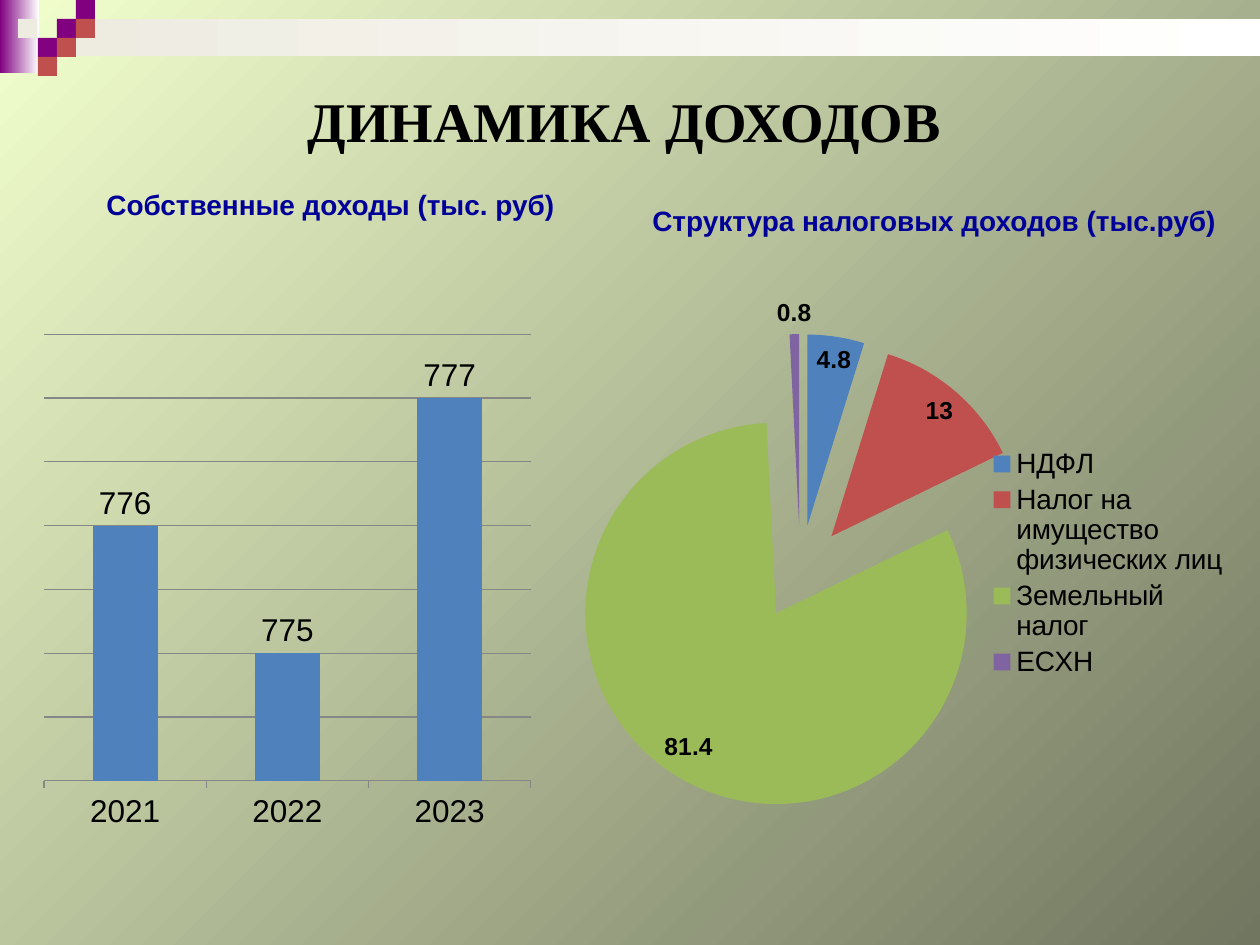
"""Build a slide on revenue dynamics with a column chart and a pie chart."""
from lxml import etree
from pptx import Presentation
from pptx import util as u
from pptx.chart.data import CategoryChartData
from pptx.dml.color import RGBColor
from pptx.enum import chart as ch
from pptx.enum import shapes, text
from pptx.oxml.ns import qn

PURPLE, RED, CREAM, WHITE, BLACK = "800080", "C0504D", "EEECE1", "FFFFFF", "000000"
BLUE, GREEN, VIOLET, NAVY, GREY = "4F81BD", "9BBB59", "8064A2", "000099", "868686"


def px(n):
    return u.Emu(round(n * 914400 / 126))


def box(*lengths):
    return [px(n) for n in lengths]


def rgb(value):
    return RGBColor.from_string(value)


def solid(fill, color):
    fill.solid()
    fill.fore_color.rgb = rgb(color)


def gradient(fill, start, end, angle=0):
    fill.gradient()
    fill.gradient_angle = angle
    for stop, color in zip(fill.gradient_stops, (start, end)):
        stop.color.rgb = rgb(color)


def style(font, size, color=BLACK, bold=False, name="Arial"):
    font.size, font.bold, font.name = u.Pt(size), bold, name
    font.color.rgb = rgb(color)


def add_rect(s, x, y, w, h, *colors):
    sp = s.shapes.add_shape(shapes.MSO_SHAPE.RECTANGLE, *box(x, y, w, h))
    sp.shadow.inherit = False
    sp.line.fill.background()
    paint = gradient if len(colors) == 2 else solid
    paint(sp.fill, *colors)


def add_header(s, x, y):
    add_rect(s, x, y, 39, 73, PURPLE, WHITE)
    add_rect(s, x + 57, y + 19, 1203, 37, CREAM, WHITE)
    add_rect(s, x + 18, y + 19, 19, 19, CREAM)
    for step in range(3):
        left, top = x + 38 + 19 * step, y + 38 - 19 * step
        add_rect(s, left, top, 19, 19, PURPLE)
        add_rect(s, left, top + 19, 19, 19, RED)


def add_title(s, x, y, w, h):
    sp = s.shapes.title
    sp.left, sp.top, sp.width, sp.height = box(x, y, w, h)
    tf = sp.text_frame
    tf.text = "ДИНАМИКА ДОХОДОВ"
    tf.margin_left = tf.margin_right = tf.margin_top = tf.margin_bottom = 0
    tf.vertical_anchor = text.MSO_ANCHOR.TOP
    tf.auto_size = text.MSO_AUTO_SIZE.NONE
    p = tf.paragraphs[0]
    p.alignment = text.PP_ALIGN.CENTER
    p.line_spacing, p.space_after = u.Pt(38.4), u.Pt(23.1)
    style(p.runs[0].font, 32, bold=True, name="Times New Roman")


def add_caption(s, x, y, w, h, wording, wrap):
    tf = s.shapes.add_textbox(*box(x, y, w, h)).text_frame
    tf.text = wording
    tf.word_wrap = wrap
    tf.vertical_anchor = text.MSO_ANCHOR.MIDDLE
    tf.auto_size = text.MSO_AUTO_SIZE.SHAPE_TO_FIT_TEXT
    style(tf.paragraphs[0].runs[0].font, 16, NAVY, bold=True)


def add_chart(s, kind, bounds, cats, vals):
    data = CategoryChartData()
    data.categories = cats
    data.add_series("Series 1", vals)
    chart = s.shapes.add_chart(kind, *box(*bounds), data).chart
    chart.has_title = chart.has_legend = False
    style(chart.font, 18)
    return chart


def add_labels(plot, size, position, bold=False):
    plot.has_data_labels = True
    labels = plot.data_labels
    labels.show_value = True
    labels.position = position
    style(labels.font, size, bold=bold)


def add_revenue_columns(s, *bounds):
    chart = add_chart(s, ch.XL_CHART_TYPE.COLUMN_CLUSTERED, bounds,
                      ["2021", "2022", "2023"], [776, 775, 777])
    plot = chart.plots[0]
    plot.gap_width, plot.vary_by_categories = 150, False
    solid(plot.series[0].format.fill, BLUE)
    add_labels(plot, 18, ch.XL_LABEL_POSITION.OUTSIDE_END)
    values, years = chart.value_axis, chart.category_axis
    values.minimum_scale, values.maximum_scale, values.major_unit = 774, 777.5, 0.5
    values.visible = False
    values.has_major_gridlines = True
    years.major_tick_mark = ch.XL_TICK_MARK.OUTSIDE
    for line in (values.major_gridlines.format.line, years.format.line):
        line.color.rgb = rgb(GREY)
        line.width = u.Pt(0.75)


def set_plot_layout(chart, x, y, w, h):
    area = chart.plots[0]._element.getparent()
    for old in area.findall(qn("c:layout")):
        area.remove(old)
    layout = etree.Element(qn("c:layout"))
    manual = etree.SubElement(layout, qn("c:manualLayout"))
    settings = {"layoutTarget": "inner", "xMode": "edge", "yMode": "edge",
                "x": x, "y": y, "w": w, "h": h}
    for tag, value in settings.items():
        etree.SubElement(manual, qn("c:" + tag)).set("val", str(value))
    area.insert(0, layout)


def add_tax_pie(s, *bounds):
    cats = ["НДФЛ", "Налог на имущество физических лиц", "Земельный налог", "ЕСХН"]
    chart = add_chart(s, ch.XL_CHART_TYPE.PIE, bounds, cats, [4.8, 13, 81.4, 0.8])
    plot = chart.plots[0]
    series = plot.series[0]
    explosion = etree.Element(qn("c:explosion"))
    explosion.set("val", "25")
    series._element.find(qn("c:tx")).addnext(explosion)
    for i, color in enumerate((BLUE, RED, GREEN, VIOLET)):
        solid(series.points[i].format.fill, color)
    add_labels(plot, 14, ch.XL_LABEL_POSITION.BEST_FIT, bold=True)
    chart.has_legend = True
    chart.legend.position = ch.XL_LEGEND_POSITION.RIGHT
    chart.legend.include_in_layout = False
    style(chart.legend.font, 16)
    set_plot_layout(chart, 0.03, 0.03, 0.68, 0.97)


def main():
    prs = Presentation()
    prs.slide_width, prs.slide_height = px(1260), px(945)
    s = prs.slides.add_slide(prs.slide_layouts[5])
    gradient(s.background.fill, "F2FFCD", "70765F", 315)
    add_header(s, 0, 0)
    add_title(s, 193, 86, 863, 79)
    add_caption(s, 94, 181, 496, 47, "Собственные доходы (тыс. руб)", True)
    add_caption(s, 640, 197, 604, 47, "Структура налоговых доходов (тыс.руб)", False)
    add_revenue_columns(s, 34, 324, 507, 515)
    add_tax_pie(s, 541, 246, 701, 634)
    prs.save("out.pptx")


if __name__ == "__main__":
    main()
